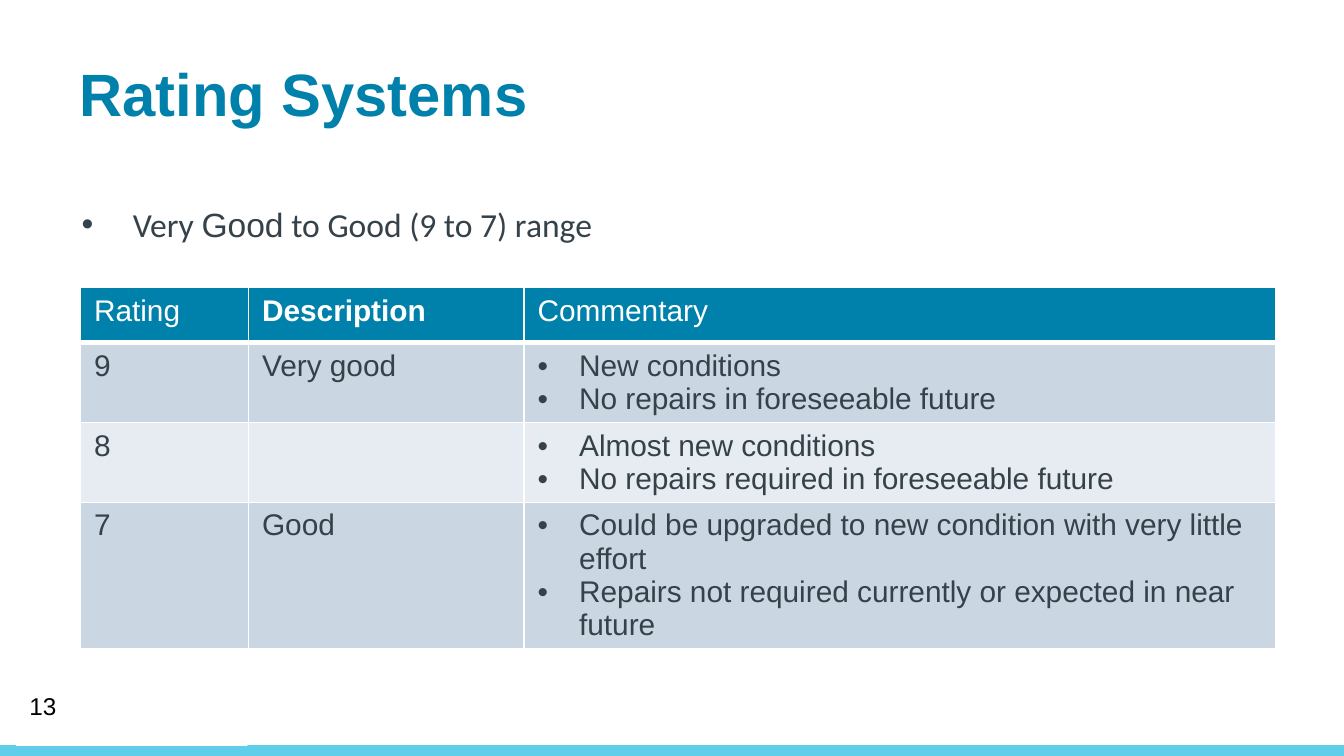
from dataclasses import dataclass

from lxml import etree
from pptx import Presentation
from pptx import util as u
from pptx.dml.color import RGBColor
from pptx.enum import shapes, text
from pptx.oxml.ns import qn

# Content
TITLE = "Rating Systems"
RANGE_RUNS = [("Very ", "Calibri"), ("Good", "Arial"), (" to Good (9 to 7) range", "Calibri")]
PAGE = "13"
HEADER = [("Rating", False), ("Description", True), ("Commentary", False)]
RATINGS = [
    ("9", "Very good", ["New conditions", "No repairs in foreseeable future"]),
    ("8", "", ["Almost new conditions", "No repairs required in foreseeable future"]),
    ("7", "Good", ["Could be upgraded to new condition with very little effort",
                   "Repairs not required currently or expected in near future"]),
]


@dataclass(frozen=True)
class Theme:
    blue: str = "0081AB"
    ink: str = "36424A"
    black: str = "000000"
    white: str = "FFFFFF"
    strip: str = "5FCEEA"
    bands: tuple = ("CAD7E2", "E6ECF1")
    title: int = 32
    body: int = 18
    table: int = 16
    page: int = 13


THEME = Theme()
WIDTH = 10
HEIGHT = WIDTH * 9 / 16
STRIP = 0.08
COLUMNS = [1.25, 2.05, 5.59]
ROW = 0.41


def place(left, top, width, height):
    return [u.Inches(n) for n in (left, top, width, height)]


def style(font, size, color, bold=False, name="Arial"):
    for key, value in dict(size=u.Pt(size), bold=bold, name=name).items():
        setattr(font, key, value)
    font.color.rgb = RGBColor.from_string(color)


def bullet(paragraph, indent):
    props = paragraph._p.get_or_add_pPr()
    props.set("marL", str(u.Inches(indent)))
    props.set("indent", str(u.Inches(-indent)))
    color = etree.SubElement(props, qn("a:buClr"))
    etree.SubElement(color, qn("a:srgbClr"), val=THEME.ink)
    etree.SubElement(props, qn("a:buFont"), typeface="Arial")
    etree.SubElement(props, qn("a:buChar"), char="•")


def set_frame(frame, anchor, left_inset=0.1):
    formats = dict(word_wrap=True, auto_size=text.MSO_AUTO_SIZE.NONE, vertical_anchor=anchor,
                   margin_left=u.Inches(left_inset), margin_right=u.Inches(0.1),
                   margin_top=u.Inches(0.05), margin_bottom=u.Inches(0.05))
    for key, value in formats.items():
        setattr(frame, key, value)


def add_bar(slide, box, color):
    bar = slide.shapes.add_shape(shapes.MSO_SHAPE.RECTANGLE, *place(*box))
    bar.shadow.inherit = False
    bar.fill.solid()
    bar.fill.fore_color.rgb = RGBColor.from_string(color)
    bar.line.fill.background()


def fill_cell(cell, lines, fill, color, bold=False, bulleted=False, bottom=1):
    cell.fill.solid()
    cell.fill.fore_color.rgb = RGBColor.from_string(fill)
    # Borders come before the fill in the cell properties
    props = cell._tc.get_or_add_tcPr()
    sides = [("lnL", 1), ("lnR", 1), ("lnT", 1), ("lnB", bottom)]
    for position, (side, points) in enumerate(sides):
        line = etree.Element(qn(f"a:{side}"), w=str(u.Pt(points)))
        solid = etree.SubElement(line, qn("a:solidFill"))
        etree.SubElement(solid, qn("a:srgbClr"), val=THEME.white)
        props.insert(position, line)
    cell.text_frame.text = "\n".join(lines)
    for paragraph in cell.text_frame.paragraphs:
        if bulleted:
            bullet(paragraph, 0.31)
        for run in paragraph.runs:
            style(run.font, THEME.table, color, bold)


def add_ratings(slide):
    box = place(0.6, 2.14, sum(COLUMNS), ROW * (len(RATINGS) + 1))
    table = slide.shapes.add_table(len(RATINGS) + 1, len(COLUMNS), *box).table
    for column, width in zip(table.columns, COLUMNS):
        column.width = u.Inches(width)
    for index, (label, bold) in enumerate(HEADER):
        fill_cell(table.cell(0, index), [label], THEME.blue, THEME.white, bold, bottom=3)
    for row, (rating, description, comments) in enumerate(RATINGS, start=1):
        band = THEME.bands[(row - 1) % 2]
        for index, lines in enumerate([[rating], [description], comments]):
            fill_cell(table.cell(row, index), lines, band, THEME.ink, bulleted=index == 2)


def main():
    deck = Presentation()
    deck.slide_width, deck.slide_height = u.Inches(WIDTH), u.Inches(HEIGHT)
    slide = deck.slides.add_slide(deck.slide_layouts[5])

    # Footer strip and page number
    add_bar(slide, (0, HEIGHT - STRIP, WIDTH, STRIP), THEME.strip)
    add_bar(slide, (0.12, 5.42, 1.72, 0.13), THEME.white)
    page = slide.shapes.add_textbox(*place(0.12, 5.1, 2.25, 0.3)).text_frame
    set_frame(page, text.MSO_ANCHOR.MIDDLE)
    page.text = PAGE
    style(page.paragraphs[0].runs[0].font, THEME.page, THEME.black)

    # Title
    title = slide.shapes.title
    title.left, title.top, title.width, title.height = place(0.59, 0.37, 8.99, 0.57)
    set_frame(title.text_frame, text.MSO_ANCHOR.TOP, left_inset=0)
    title.text_frame.text = TITLE
    heading = title.text_frame.paragraphs[0]
    heading.alignment = text.PP_ALIGN.LEFT
    style(heading.runs[0].font, THEME.title, THEME.blue, bold=True)

    # Rating range
    rating_range = slide.shapes.add_textbox(*place(0.51, 1.47, 9.07, 0.79)).text_frame
    set_frame(rating_range, text.MSO_ANCHOR.TOP)
    range_line = rating_range.paragraphs[0]
    bullet(range_line, 0.38)
    for words, name in RANGE_RUNS:
        run = range_line.add_run()
        run.text = words
        style(run.font, THEME.body, THEME.ink, name=name)

    # Table of ratings
    add_ratings(slide)
    deck.save("out.pptx")


if __name__ == "__main__":
    main()
